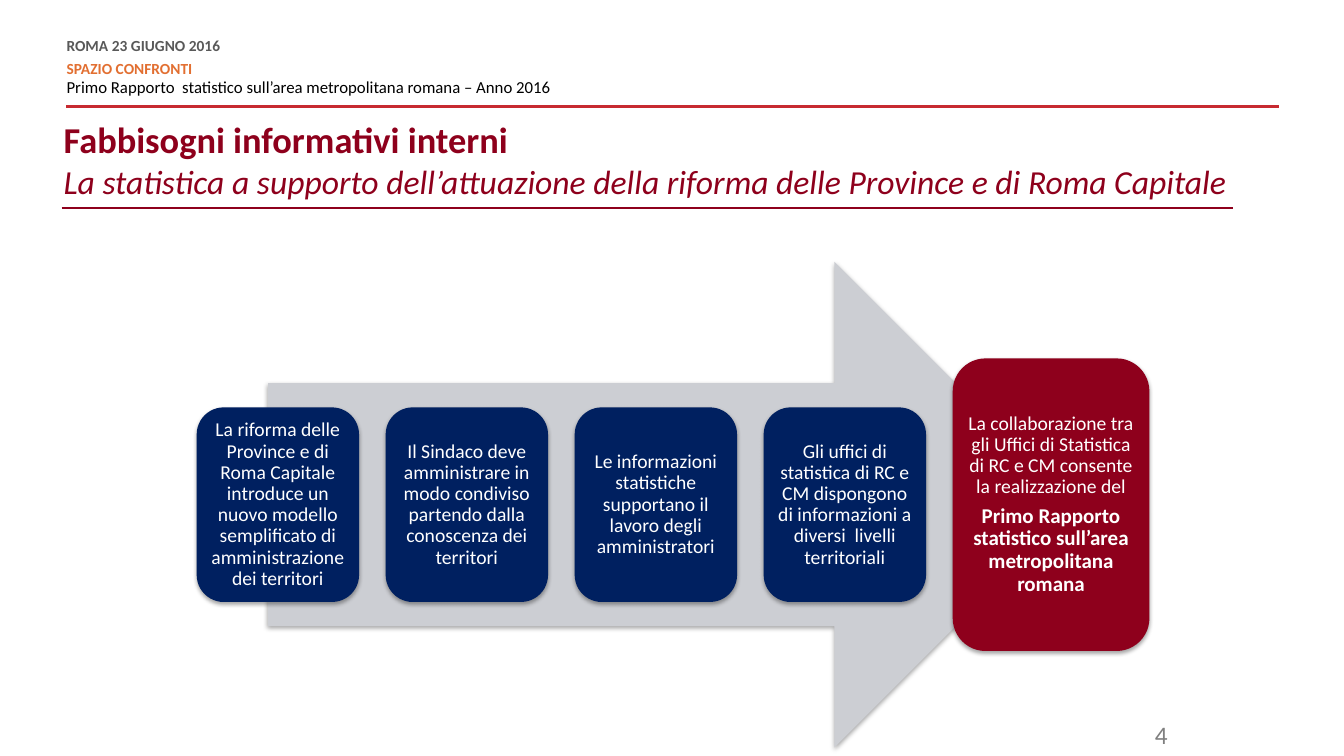
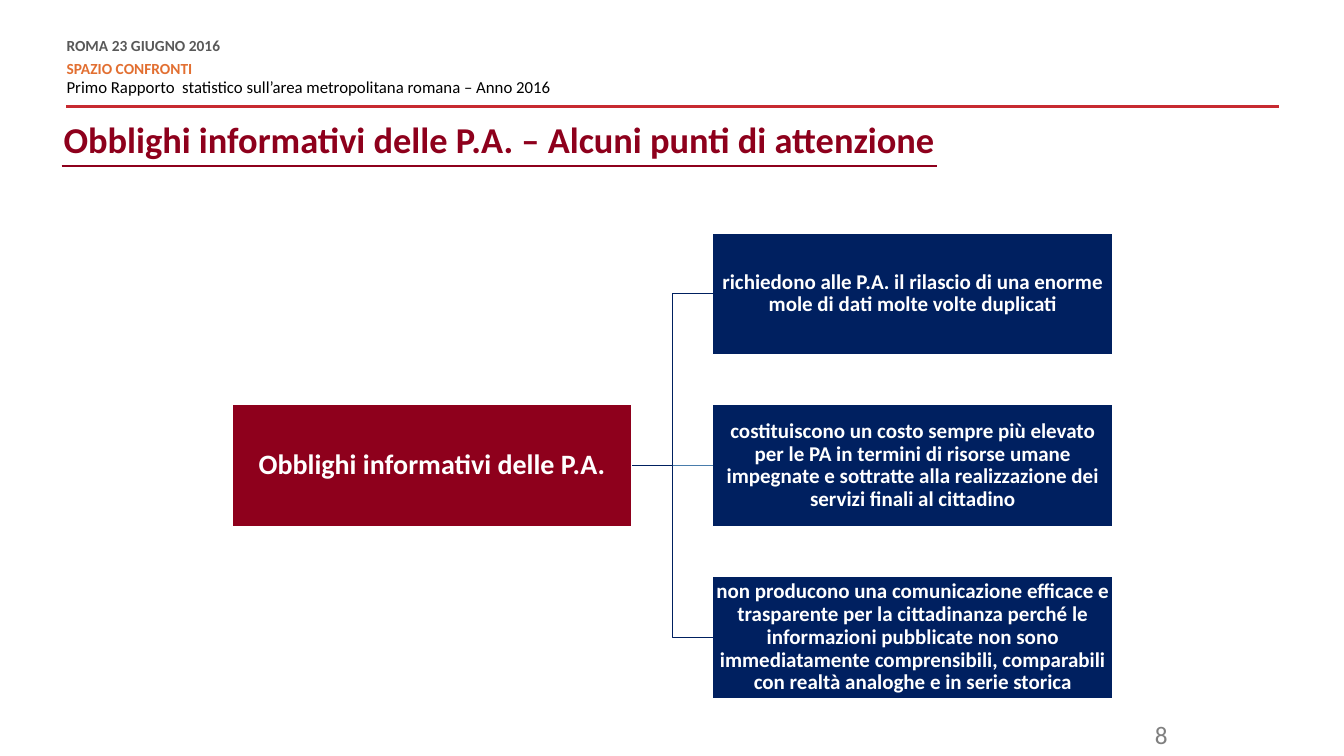
from dataclasses import dataclass

from lxml import etree
from pptx import Presentation
from pptx.dml.color import RGBColor
from pptx.enum.shapes import MSO_CONNECTOR, MSO_SHAPE
from pptx.enum.text import MSO_ANCHOR, PP_ALIGN
from pptx.oxml.ns import qn
from pptx.util import Pt

STRAIGHT, ELBOW = MSO_CONNECTOR.STRAIGHT, MSO_CONNECTOR.ELBOW
RECTANGLE, ROUNDED = MSO_SHAPE.RECTANGLE, MSO_SHAPE.ROUNDED_RECTANGLE
RIGHT_ARROW = MSO_SHAPE.RIGHT_ARROW
LEFT, CENTER, RIGHT = PP_ALIGN.LEFT, PP_ALIGN.CENTER, PP_ALIGN.RIGHT
TOP, MIDDLE = MSO_ANCHOR.TOP, MSO_ANCHOR.MIDDLE
LEFT_SITE, RIGHT_SITE = 1, 3

FONT = "Calibri"
WHITE, BLACK = "FFFFFF", "000000"
NAVY, CRIMSON, BLUE = "002060", "8E001C", "497CAB"
RED, ORANGE = "C72A31", "E26F31"
DARK_GRAY, GRAY, PALE = "595959", "7F7F7F", "CCCED3"


def rgb(hex_color):
    return RGBColor.from_string(hex_color)


@dataclass
class Line:
    """One paragraph of text and its look."""
    text: str
    size: float
    color: str = WHITE
    bold: bool = False
    italic: bool = False
    before: float = 0


class Deck:
    def __init__(self):
        self.presentation = Presentation()
        self.presentation.slide_width = Pt(960)
        self.presentation.slide_height = Pt(540)
        self.slide = None

    def add_slide(self, number, title, rule_end, subtitle=None):
        """Start a slide with header, underlined title and page number."""
        layout = self.presentation.slide_layouts[6]
        self.slide = self.presentation.slides.add_slide(layout)
        self.rule(47.5, 913.5, 76.3, RED, 2)
        self.text(47.5, 28, 375, 43, [
            Line("ROMA 23 GIUGNO 2016", 11, DARK_GRAY, bold=True),
            Line("SPAZIO CONFRONTI", 11, ORANGE, bold=True, before=6),
            Line("Primo Rapporto  statistico sull’area metropolitana romana"
                 " – Anno 2016", 12, BLACK, before=3),
        ], spacing=Pt(10.8))
        self.text(756, 514, 78, 22, [Line(number, 18, GRAY)], align=RIGHT)
        lines = [Line(title, 26, CRIMSON, bold=True)]
        if subtitle:
            lines.append(Line(subtitle, 24, CRIMSON, italic=True))
        height = 32 if len(lines) == 1 else 62
        self.text(45.4, 83.5, 860, height, lines)
        self.rule(44, rule_end, 86.8 + height, CRIMSON, 1.5)

    def fill_frame(self, frame, lines, align, spacing, anchor, inset):
        frame.word_wrap = True
        frame.vertical_anchor = anchor
        frame.margin_left = frame.margin_right = Pt(inset)
        frame.margin_top = frame.margin_bottom = Pt(inset)
        frame.text = "\n".join(line.text for line in lines)
        for paragraph, line in zip(frame.paragraphs, lines):
            paragraph.alignment = align
            paragraph.line_spacing = spacing
            if line.before:
                paragraph.space_before = Pt(line.before)
            for run in paragraph.runs:
                font = run.font
                font.name, font.size = FONT, Pt(line.size)
                font.bold, font.italic = line.bold, line.italic
                font.color.rgb = rgb(line.color)

    def text(self, left, top, width, height, lines, align=LEFT, spacing=1.0):
        box = self.slide.shapes.add_textbox(
            Pt(left), Pt(top), Pt(width), Pt(height))
        self.fill_frame(box.text_frame, lines, align, spacing, TOP, 0)

    def shape(self, kind, left, top, width, height, fill,
              lines=(), inset=0, outline=None, shadow=False):
        shape = self.slide.shapes.add_shape(
            kind, Pt(left), Pt(top), Pt(width), Pt(height))
        shape.fill.solid()
        shape.fill.fore_color.rgb = rgb(fill)
        if outline:
            shape.line.color.rgb = rgb(outline)
            shape.line.width = Pt(1)
        else:
            shape.line.fill.background()
        shape.shadow.inherit = False
        if shadow:
            self.add_shadow(shape)
        if lines:
            self.fill_frame(shape.text_frame, lines, CENTER, 0.9, MIDDLE,
                            inset)
        return shape

    def add_shadow(self, shape):
        effects = shape._element.spPr.find(qn("a:effectLst"))
        outer = etree.SubElement(
            effects, qn("a:outerShdw"), blurRad=str(Pt(3.1)),
            dist=str(Pt(1.8)), dir="5400000", rotWithShape="0")
        color = etree.SubElement(outer, qn("a:srgbClr"), val=BLACK)
        etree.SubElement(color, qn("a:alpha"), val="35000")

    def connector(self, kind, start, end, color, width):
        connector = self.slide.shapes.add_connector(
            kind, *(Pt(value) for value in (*start, *end)))
        connector.line.color.rgb = rgb(color)
        connector.line.width = Pt(width)
        etree.SubElement(connector._element.spPr, qn("a:effectLst"))
        return connector

    def rule(self, left, right, y, color, width):
        self.connector(STRAIGHT, (left, y), (right, y), color, width)

    def join(self, parent, child, kind, color):
        """Link the right side of one box to the left side of another."""
        connector = self.connector(kind, (0, 0), (0, 0), color, 1)
        connector.begin_connect(parent, RIGHT_SITE)
        connector.end_connect(child, LEFT_SITE)


def build_needs(deck):
    deck.add_slide(
        "4", "Fabbisogni informativi interni", 880.5,
        "La statistica a supporto dell’attuazione della riforma delle"
        " Province e di Roma Capitale")
    steps = [
        "La riforma delle Province e di Roma Capitale introduce un nuovo"
        " modello semplificato di amministrazione dei territori",
        "Il Sindaco deve amministrare in modo condiviso partendo dalla"
        " conoscenza dei territori",
        "Le informazioni statistiche supportano il lavoro degli"
        " amministratori",
        "Gli uffici di statistica di RC e CM dispongono di informazioni a"
        " diversi  livelli territoriali",
    ]
    result = [
        Line("La collaborazione tra gli Uffici di Statistica di RC e CM"
             " consente la realizzazione del", 14),
        Line("Primo Rapporto statistico sull’area metropolitana romana", 15,
             bold=True, before=5),
    ]
    left, pitch, middle = 140.5, 135, 360.5
    deck.shape(RIGHT_ARROW, 191.5, middle - 173.5, 578, 347, PALE,
               shadow=True)
    for index, step in enumerate(steps):
        deck.shape(ROUNDED, left + index * pitch, middle - 69.5, 116, 139,
                   NAVY, [Line(step, 14)], inset=4.2, shadow=True)
    deck.shape(ROUNDED, left + len(steps) * pitch, middle - 104.5, 140.5, 209,
               CRIMSON, result, inset=4.2, shadow=True)


def build_duties(deck):
    deck.add_slide(
        "8", "Obblighi informativi delle P.A. – Alcuni punti di attenzione",
        669.5)
    points = [
        "richiedono alle P.A. il rilascio di una enorme mole di dati molte"
        " volte duplicati",
        "costituiscono un costo sempre più elevato per le PA in termini di"
        " risorse umane impegnate e sottratte alla realizzazione dei servizi"
        " finali al cittadino",
        "non producono una comunicazione efficace e trasparente per la"
        " cittadinanza perché le informazioni pubblicate non sono"
        " immediatamente comprensibili, comparabili con realtà analoghe e in"
        " serie storica",
    ]
    top, pitch, width, height = 166.3, 122.8, 286, 87

    def box(left, row, fill, text, size):
        return deck.shape(RECTANGLE, left, top + row * pitch, width, height,
                          fill, [Line(text, size, bold=True)], inset=0.7,
                          outline=WHITE)

    root = box(165.6, 1, CRIMSON, "Obblighi informativi delle P.A.", 20)
    upper, central, lower = [box(509, row, NAVY, point, 15)
                             for row, point in enumerate(points)]
    deck.join(root, lower, ELBOW, NAVY)
    deck.join(root, central, STRAIGHT, BLUE)
    deck.join(root, upper, ELBOW, NAVY)


def main():
    deck = Deck()
    build_needs(deck)
    build_duties(deck)
    deck.presentation.save("out.pptx")


if __name__ == "__main__":
    main()
